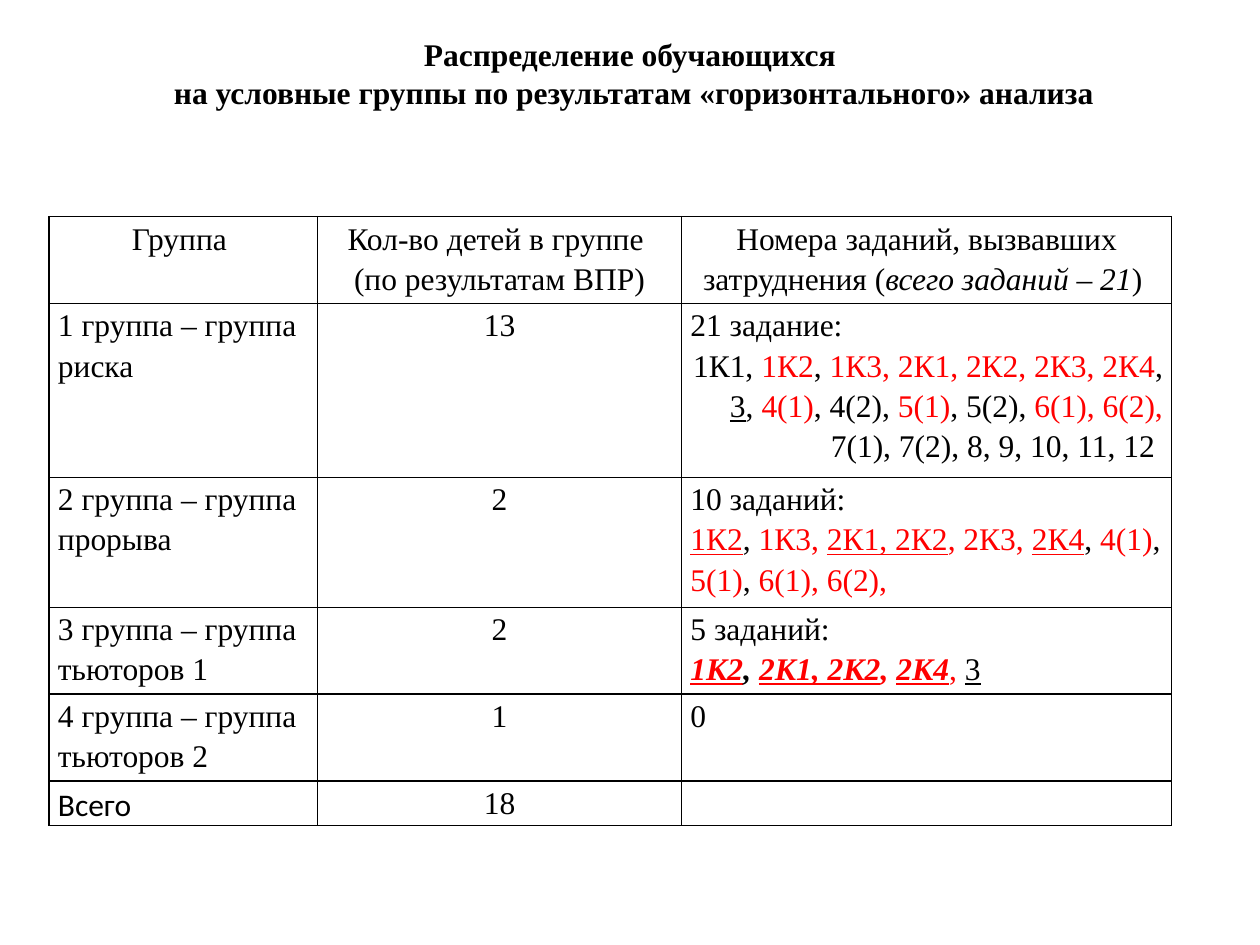
from lxml import etree
from pptx import Presentation
from pptx.dml.color import RGBColor
from pptx.enum.text import MSO_ANCHOR, MSO_AUTO_SIZE, PP_ALIGN
from pptx.oxml.ns import qn
from pptx.util import Inches, Pt

LEFT, CENTER, RIGHT = PP_ALIGN.LEFT, PP_ALIGN.CENTER, PP_ALIGN.RIGHT
BLACK = RGBColor(0, 0, 0)
RED = RGBColor(255, 0, 0)
SERIF, SANS = "Times New Roman", "Calibri"

TITLE = ["Распределение обучающихся",
         " на условные группы по результатам «горизонтального» анализа"]

# Runs are (text, style); style letters: r red, b bold, i italic, u underlined
HEADER = [
    [[("Группа ", "")]],
    [[("Кол-во детей в группе ", "")], [("(по результатам ВПР)", "")]],
    [[("Номера заданий, вызвавших затруднения (", ""),
      ("всего заданий – 21", "i"), (") ", "")]],
]
# Group, number of children, paragraphs of task numbers
GROUPS = [
    ("1 группа – группа риска", "13", [
        [("21 задание:", "")],
        [("1К1, ", ""), ("1К2", "r"), (", ", ""),
         ("1К3, 2К1, 2К2, 2К3, 2К4", "r"), (", ", ""), ("3", "u"), (", ", ""),
         ("4(1)", "r"), (", 4(2), ", ""), ("5(1)", "r"), (", 5(2), ", ""),
         ("6(1), 6(2), ", "r"), ("7(1), 7(2), 8, 9, 10, 11, 12 ", "")]]),
    ("2 группа – группа прорыва", "2", [
        [("10 заданий:", "")],
        [("1К2", "ru"), (", ", ""), ("1К3, ", "r"), ("2К1, 2К2", "ru"),
         (", 2К3, ", "r"), ("2К4", "ru"), (", ", ""), ("4(1)", "r"), (", ", ""),
         ("5(1)", "r"), (", ", ""), ("6(1), 6(2),", "r")]]),
    ("3 группа – группа тьюторов 1", "2", [
        [("5 заданий:", "")],
        [("1К2", "rbiu"), (", ", "bi"), ("2К1, 2К2", "rbiu"), (", ", "rbi"),
         ("2К4", "rbiu"), (", ", "r"), ("3", "u")]]),
    ("4 группа – группа тьюторов 2", "1", [[("0", "")]]),
    ("Всего", "18", []),
]
COL_WIDTHS = [2.13, 2.89, 3.89]
ROW_HEIGHTS = [0.69, 1.38, 1.03, 0.69, 0.69, 0.34]


def add_run(p, text, style="", font=SERIF):
    r = p.add_run()
    r.text = text
    f = r.font
    f.name, f.size = font, Pt(18)
    f.color.rgb = RED if "r" in style else BLACK
    f.bold, f.italic, f.underline = "b" in style, "i" in style, "u" in style


def set_borders(cell):
    """Draw a thin black line on all four sides of the cell."""
    tc_pr = cell._tc.get_or_add_tcPr()
    for i, side in enumerate(("a:lnL", "a:lnR", "a:lnT", "a:lnB")):
        ln = etree.Element(qn(side), w=str(Pt(1)))
        fill = etree.SubElement(ln, qn("a:solidFill"))
        etree.SubElement(fill, qn("a:srgbClr"), val=str(BLACK))
        tc_pr.insert(i, ln)


def fill_cell(cell, paragraphs, aligns, font=SERIF):
    cell.margin_left = cell.margin_right = Inches(0.07)
    cell.margin_top = cell.margin_bottom = 0
    cell.fill.background()
    set_borders(cell)
    tf = cell.text_frame
    for i, runs in enumerate(paragraphs):
        p = tf.add_paragraph() if i else tf.paragraphs[0]
        p.alignment = aligns[i]
        p.line_spacing = 1.15
        for text, style in runs:
            add_run(p, text, style, font)


def add_title(slide):
    title = slide.shapes.title
    title.left, title.top = 0, Inches(0.23)
    title.width, title.height = Inches(10), Inches(0.71)
    tf = title.text_frame
    tf.auto_size = MSO_AUTO_SIZE.NONE
    tf.vertical_anchor = MSO_ANCHOR.TOP
    for i, line in enumerate(TITLE):
        p = tf.add_paragraph() if i else tf.paragraphs[0]
        p.alignment = CENTER
        add_run(p, line, "b")


def add_groups_table(slide):
    table = slide.shapes.add_table(
        len(ROW_HEIGHTS), len(COL_WIDTHS), Inches(0.39), Inches(1.72),
        Inches(sum(COL_WIDTHS)), Inches(sum(ROW_HEIGHTS))).table
    table.first_row = table.horz_banding = False
    for col, width in zip(table.columns, COL_WIDTHS):
        col.width = Inches(width)
    for row, height in zip(table.rows, ROW_HEIGHTS):
        row.height = Inches(height)

    for c, paragraphs in enumerate(HEADER):
        fill_cell(table.cell(0, c), paragraphs, [CENTER, CENTER])
    for r, (group, count, tasks) in enumerate(GROUPS, 1):
        font = SANS if r == len(GROUPS) else SERIF
        task_align = RIGHT if r == 1 else LEFT
        fill_cell(table.cell(r, 0), [[(group, "")]], [LEFT], font)
        fill_cell(table.cell(r, 1), [[(count, "")]], [CENTER])
        fill_cell(table.cell(r, 2), tasks, [LEFT, task_align])


def main():
    prs = Presentation()
    prs.slide_width, prs.slide_height = Inches(10), Inches(7.5)
    slide = prs.slides.add_slide(prs.slide_layouts[5])
    add_title(slide)
    add_groups_table(slide)
    prs.save("out.pptx")


if __name__ == "__main__":
    main()
